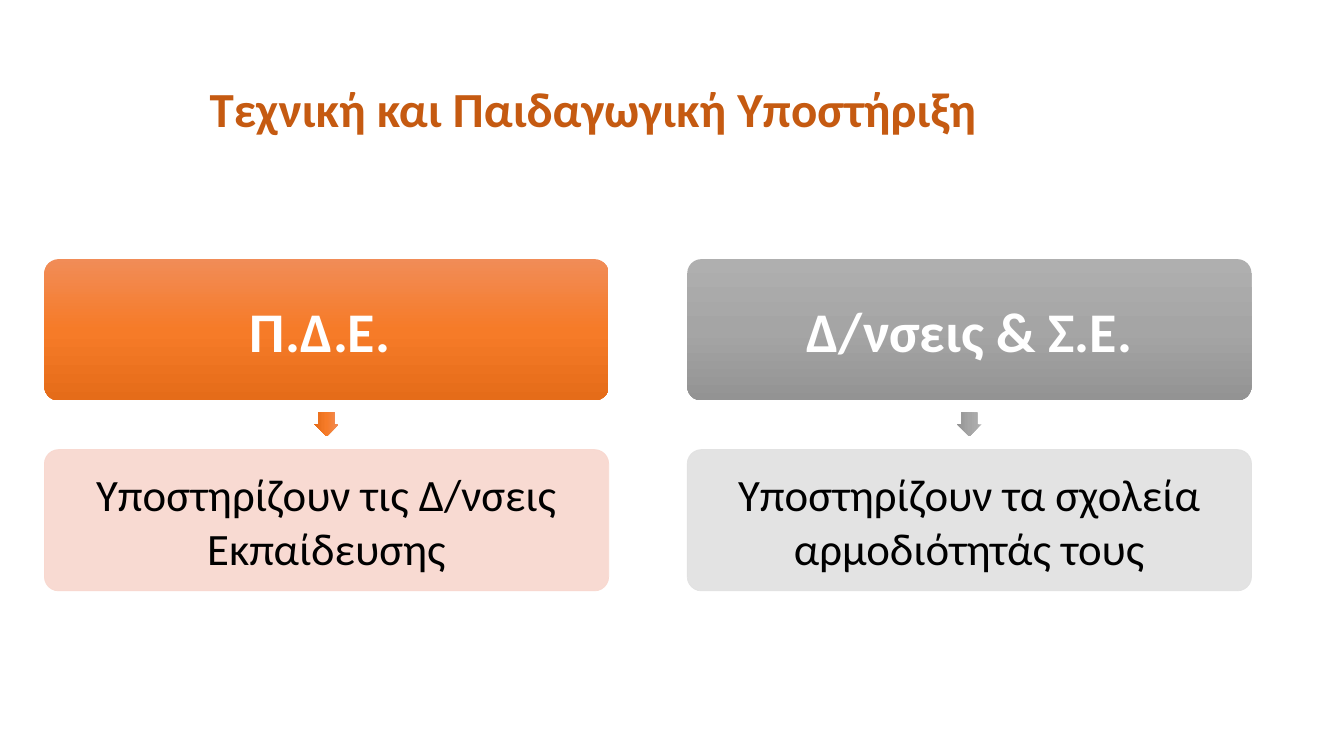
from copy import deepcopy

from lxml.etree import SubElement
from pptx import Presentation
from pptx.dml.color import RGBColor
from pptx.enum.shapes import MSO_SHAPE as Shape
from pptx.enum.text import MSO_ANCHOR as Anchor, MSO_AUTO_SIZE as AutoSize, PP_ALIGN as Align
from pptx.oxml.ns import qn
from pptx.util import Cm, Pt

COLORS = {
    "title": "C55A11",
    "white": "FFFFFF",
    "black": "000000",
    "orange": ["F18C57", "F67B28", "E56C19"],
    "gray": ["AFAFAF", "A5A5A5", "939393"],
    "pale orange": "F8D7CE",
    "pale gray": "E1E1E1",
}
TITLE_ONLY = 5

BOX_WIDTH, BOX_HEIGHT = 14.22, 3.56
HEAD_TOP, ARROW_TOP, DETAIL_TOP = 6.53, 10.39, 11.33
FIRST_LEFT, COLUMN_STEP = 1.12, 16.2
ARROW_SIZE = 0.61

COLUMNS = [
    ("Π.Δ.Ε. ", "Υποστηρίζουν τις Δ/νσεις Εκπαίδευσης", "orange"),
    ("Δ/νσεις & Σ.Ε.", "Υποστηρίζουν τα σχολεία αρμοδιότητάς τους", "gray"),
]


class SupportSlide:
    """Holds the style and the current slide."""

    font = "Calibri"

    def __init__(self, deck):
        self.page = deck.slides.add_slide(deck.slide_layouts[TITLE_ONLY])

    def color(self, name):
        return RGBColor.from_string(COLORS[name])

    def set_text(self, frame, text, size, color, bold):
        frame.word_wrap = True
        para = frame.paragraphs[0]
        para.text = text
        para.alignment = Align.CENTER
        para.font.name = self.font
        para.font.size = Pt(size)
        para.font.bold = bold
        para.font.color.rgb = self.color(color)

    def title(self, text, left, top, width, height):
        box = self.page.shapes.title
        box.left, box.top, box.width, box.height = Cm(left), Cm(top), Cm(width), Cm(height)
        frame = box.text_frame
        frame.auto_size = AutoSize.SHAPE_TO_FIT_TEXT
        frame.vertical_anchor = Anchor.TOP
        self.set_text(frame, text, 35, "title", True)

    def shape(self, kind, left, top, width, height):
        shape = self.page.shapes.add_shape(kind, Cm(left), Cm(top), Cm(width), Cm(height))
        shape.shadow.inherit = False
        return shape

    def shade(self, shape, name):
        """Fill from top to bottom with three evenly spaced colours."""
        shape.line.fill.background()
        fill = shape.fill
        fill.gradient()
        fill.gradient_angle = 270
        stop_list = shape._element.spPr.find(".//" + qn("a:gsLst"))
        stop_list.append(deepcopy(stop_list[-1]))
        for index, stop in enumerate(fill.gradient_stops):
            stop.position = index / 2
            stop.color.rgb = RGBColor.from_string(COLORS[name][index])

    def tint(self, shape, name):
        """Give fill and outline the same slightly transparent colour."""
        shape.line.width = Pt(0.5)
        for fill in (shape.fill, shape.line.fill):
            fill.solid()
            fill.fore_color.rgb = self.color(name)
        for color in shape._element.spPr.iter(qn("a:srgbClr")):
            SubElement(color, qn("a:alpha"), val="90000")

    def box(self, text, left, top, size, color, bold, inset):
        box = self.shape(Shape.ROUNDED_RECTANGLE, left, top, BOX_WIDTH, BOX_HEIGHT)
        box.adjustments[0] = 0.1
        frame = box.text_frame
        frame.vertical_anchor = Anchor.MIDDLE
        frame.margin_left = frame.margin_right = Cm(inset)
        frame.margin_top = frame.margin_bottom = Cm(inset)
        self.set_text(frame, text, size, color, bold)
        return box

    def down_arrow(self, left, top, name):
        arrow = self.shape(Shape.RIGHT_ARROW, left, top, ARROW_SIZE, ARROW_SIZE)
        arrow.rotation = 90
        arrow.adjustments[0] = 0.67
        self.shade(arrow, name)


def main():
    deck = Presentation()
    deck.slide_width, deck.slide_height = Cm(33.87), Cm(19.05)
    slide = SupportSlide(deck)

    # Title
    slide.title("Τεχνική και Παιδαγωγική Υποστήριξη ", 2.95, 1.85, 24.28, 1.75)

    # One column per support level: heading, arrow, detail
    for index, (heading, detail, name) in enumerate(COLUMNS):
        left = FIRST_LEFT + index * COLUMN_STEP
        slide.shade(slide.box(heading, left, HEAD_TOP, 40, "white", True, 0.15), name)
        slide.down_arrow(left + (BOX_WIDTH - ARROW_SIZE) / 2, ARROW_TOP, name)
        slide.tint(slide.box(detail, left, DETAIL_TOP, 32, "black", False, 0.1), "pale " + name)

    deck.save("out.pptx")


if __name__ == "__main__":
    main()
